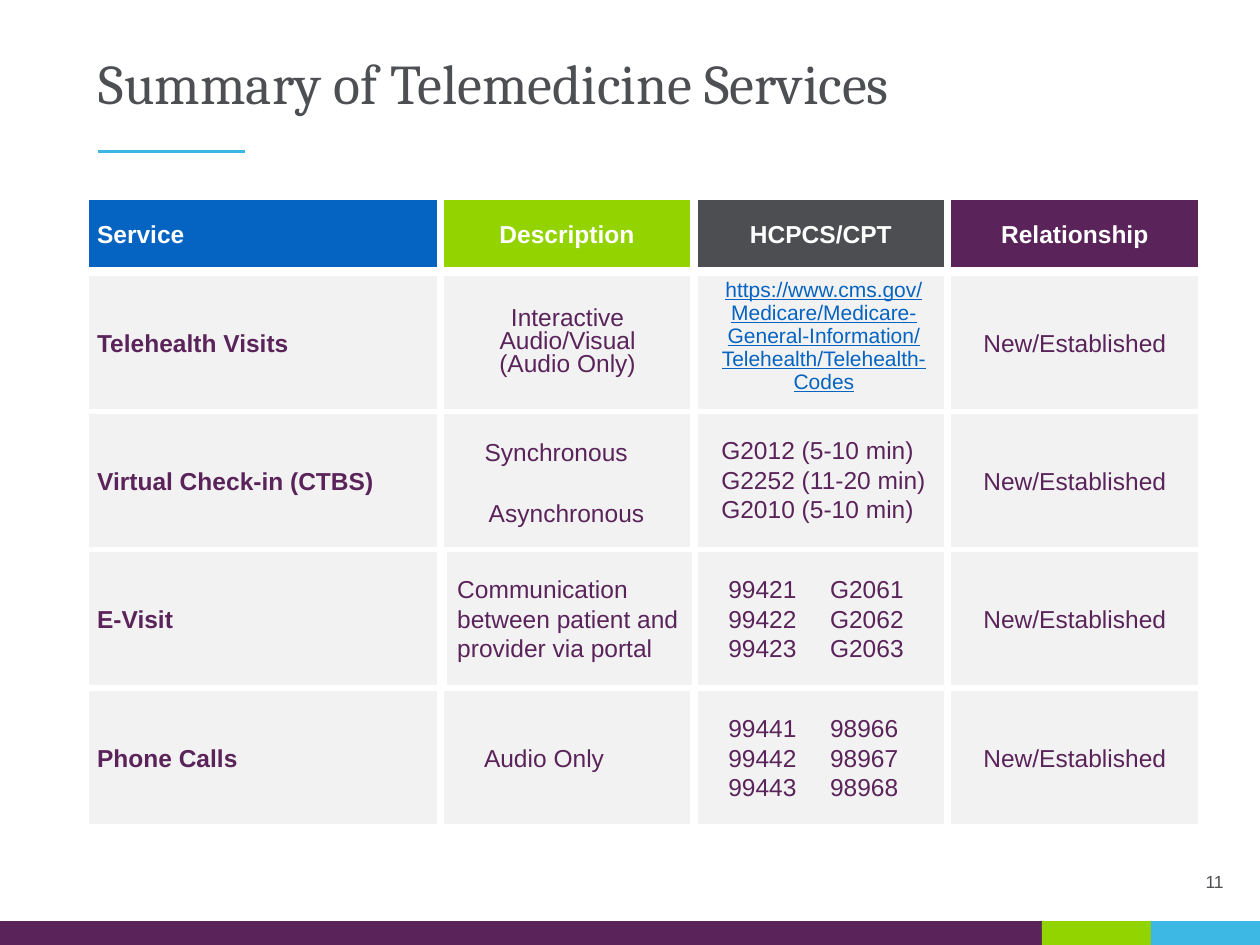
"""Build the slide that summarises telemedicine services."""
from dataclasses import dataclass

from lxml import etree
from pptx import Presentation
from pptx.dml.color import RGBColor
from pptx.enum.shapes import MSO_CONNECTOR, MSO_SHAPE
from pptx.enum.text import MSO_ANCHOR, PP_ALIGN
from pptx.oxml.ns import qn
from pptx.util import Pt

LEFT, CENTER, RIGHT = PP_ALIGN.LEFT, PP_ALIGN.CENTER, PP_ALIGN.RIGHT
TOP, MIDDLE, BOTTOM = MSO_ANCHOR.TOP, MSO_ANCHOR.MIDDLE, MSO_ANCHOR.BOTTOM
RECT, STRAIGHT = MSO_SHAPE.RECTANGLE, MSO_CONNECTOR.STRAIGHT

WHITE = RGBColor(0xFF, 0xFF, 0xFF)
GRAY = RGBColor(0x4D, 0x4F, 0x53)
HEAD_GRAY = RGBColor(0x4D, 0x4E, 0x52)
PALE = RGBColor(0xF2, 0xF2, 0xF2)
PURPLE = RGBColor(0x5A, 0x23, 0x5A)
BAR_PURPLE = RGBColor(0x5A, 0x24, 0x5A)
GREEN = RGBColor(0x92, 0xD3, 0x00)
BAR_GREEN = RGBColor(0x92, 0xD4, 0x00)
BLUE = RGBColor(0x05, 0x63, 0xC1)
SKY = RGBColor(0x3C, 0xB7, 0xE3)
BAR_SKY = RGBColor(0x3D, 0xB7, 0xE4)

COLUMNS = [(49.5, 201.6)] + [(252 + 145.1 * i, 144) for i in range(3)]
HEAD_TOP, HEAD_HEIGHT, HEAD_TEXT_WIDTH = 112.5, 41.8, 108
ROW_TOP, ROW_PITCH, ROW_HEIGHT = 156.2, 79, 79.2
E_VISIT_SHIFT = 2.2
LABEL_LEFT = 48.4
CODE_LEFT, CODE_WIDTH = 405.1, 133.9
LINE_HEIGHT, BLOCK_HEIGHT = 24.5, 58.3
BAR_TOP, BAR_HEIGHT = 526.3, 13.7

HEADERS = [("Service", BLUE), ("Description", GREEN),
           ("HCPCS/CPT", HEAD_GRAY), ("Relationship", PURPLE)]
SERVICES = ["Telehealth Visits", "Virtual Check-in (CTBS)", "E-Visit", "Phone Calls"]
BARS = [(0, 595.4, BAR_PURPLE), (595.4, 62.3, BAR_GREEN), (657.7, 62.3, BAR_SKY)]


@dataclass
class Style:
    """Look of the text in a box."""
    size: float = 14
    color: RGBColor = PURPLE
    font: str = "Arial"
    bold: bool = False
    underline: bool = False
    align: PP_ALIGN = LEFT
    anchor: MSO_ANCHOR = MIDDLE
    spacing: float | Pt | None = None
    inset_x: float = 7.2
    inset_y: float = 3.6
    tab: float | None = None


@dataclass
class Entry:
    """Text placed around the middle of a table row."""
    row: int
    left: float
    width: float
    height: float
    lines: list[str]
    style: Style
    shift: float = 0


PLAIN = Style()
CENTERED = Style(align=CENTER)
LABEL = Style(bold=True)
TIGHT = Style(align=CENTER, spacing=Pt(13.1), inset_x=2.9, inset_y=1.4)
URL = Style(size=12, color=BLUE, underline=True, align=CENTER,
            spacing=Pt(13.1), inset_x=2.9, inset_y=1.4)
CODES = Style(inset_x=11.1, tab=58.1)

ENTRIES = [
    Entry(0, 273.6, 101.5, 41.8, ["Interactive Audio/Visual (Audio Only)"], TIGHT),
    Entry(0, 400.3, 141.1, 68.4,
          ["https://www.cms.gov/Medicare/Medicare-General-Information/Telehealth/Telehealth-Codes"],
          URL, -3.7),
    Entry(1, 267.1, 101.5, 15.8, ["Synchronous"], TIGHT, -14.9),
    Entry(1, 272.2, 108, LINE_HEIGHT, ["Asynchronous"], PLAIN, 18.2),
    Entry(1, CODE_LEFT, CODE_WIDTH, BLOCK_HEIGHT,
          ["G2012 (5-10 min)", "G2252 (11-20 min)", "G2010 (5-10 min)"], PLAIN, -0.9),
    Entry(2, 254.2, 144, BLOCK_HEIGHT,
          ["Communication between patient and provider via portal"], PLAIN, -0.4),
    Entry(2, CODE_LEFT, CODE_WIDTH, BLOCK_HEIGHT,
          [f"9942{i}\tG206{i}" for i in (1, 2, 3)], CODES, -0.4),
    Entry(3, 269.5, 108.7, LINE_HEIGHT, ["Audio Only"], PLAIN),
    Entry(3, CODE_LEFT, CODE_WIDTH, BLOCK_HEIGHT,
          [f"9944{i}\t9896{i + 5}" for i in (1, 2, 3)], CODES),
]


def add_rect(s, left: float, top: float, width: float, height: float,
             fill: RGBColor, outlined: bool = False) -> None:
    """Draw a filled rectangle, with a white outline if wanted."""
    sp = s.shapes.add_shape(RECT, Pt(left), Pt(top), Pt(width), Pt(height))
    sp.shadow.inherit = False
    sp.fill.solid()
    sp.fill.fore_color.rgb = fill
    if outlined:
        sp.line.color.rgb = WHITE
        sp.line.width = Pt(3)
    else:
        sp.line.fill.background()


def add_text(s, left: float, top: float, width: float, height: float,
             lines: list[str], style: Style) -> None:
    """Add a text box with one paragraph for each line."""
    sp = s.shapes.add_textbox(Pt(left), Pt(top), Pt(width), Pt(height))
    tf = sp.text_frame
    tf.word_wrap = True
    tf.vertical_anchor = style.anchor
    tf.margin_left = tf.margin_right = Pt(style.inset_x)
    tf.margin_top = tf.margin_bottom = Pt(style.inset_y)
    for i, line in enumerate(lines):
        p = tf.add_paragraph() if i else tf.paragraphs[0]
        p.alignment = style.align
        if style.spacing is not None:
            p.line_spacing = style.spacing
        if style.tab is not None:
            tabs = etree.SubElement(p._p.get_or_add_pPr(), qn("a:tabLst"))
            etree.SubElement(tabs, qn("a:tab"), pos=str(Pt(style.tab)), algn="l")
        r = p.add_run()
        r.text = line
        r.font.name = style.font
        r.font.size = Pt(style.size)
        r.font.bold = style.bold
        r.font.underline = style.underline
        r.font.color.rgb = style.color


def add_entry(s, entry: Entry) -> None:
    """Place an entry around the middle of its row."""
    middle = ROW_TOP + ROW_PITCH * entry.row + ROW_HEIGHT / 2 + entry.shift
    add_text(s, entry.left, middle - entry.height / 2, entry.width,
             entry.height, entry.lines, entry.style)


def add_frame(s) -> None:
    """Draw the title, its rule, the slide number and the bottom bars."""
    rule = s.shapes.add_connector(STRAIGHT, Pt(56), Pt(86.4), Pt(140), Pt(86.4))
    rule.line.color.rgb = SKY
    rule.line.width = Pt(1.5)
    etree.SubElement(rule._element.spPr, qn("a:effectLst"))
    add_text(s, 85.7, 493.9, 620.6, 19.4, ["11"],
             Style(size=10, color=GRAY, align=RIGHT, anchor=BOTTOM, spacing=0.9))
    for left, width, color in BARS:
        add_rect(s, left, BAR_TOP, width, BAR_HEIGHT, color)
    add_text(s, 49.4, 28.5, 620.6, 44.6, ["Summary of Telemedicine Services"],
             Style(size=32, color=GRAY, font="Cambria", anchor=TOP, spacing=0.9))


def add_grid(s) -> None:
    """Draw the header cells and the body cells."""
    for (left, width), (_, color) in zip(COLUMNS, HEADERS):
        add_rect(s, left, HEAD_TOP, width, HEAD_HEIGHT, color, True)
    for row in range(len(SERVICES)):
        for col, (left, width) in enumerate(COLUMNS):
            shift = E_VISIT_SHIFT if (row, col) == (2, 1) else 0
            add_rect(s, left + shift, ROW_TOP + ROW_PITCH * row, width,
                     ROW_HEIGHT, PALE, True)


def add_contents(s) -> None:
    """Write the headers, the service rows and their entries."""
    head_top = HEAD_TOP + (HEAD_HEIGHT - LINE_HEIGHT) / 2 + 0.4
    for col, ((left, width), (name, _)) in enumerate(zip(COLUMNS, HEADERS)):
        style = Style(color=WHITE, bold=True, align=CENTER if col else LEFT)
        text_left = left + (width - HEAD_TEXT_WIDTH) / 2 if col else LABEL_LEFT
        add_text(s, text_left, head_top, HEAD_TEXT_WIDTH, LINE_HEIGHT, [name], style)
    for row, service in enumerate(SERVICES):
        add_entry(s, Entry(row, LABEL_LEFT, 203, LINE_HEIGHT, [service], LABEL))
        add_entry(s, Entry(row, 550.1, 128.2, LINE_HEIGHT, ["New/Established"], CENTERED))
    for entry in ENTRIES:
        add_entry(s, entry)


def main() -> None:
    """Build and save the presentation."""
    prs = Presentation()
    prs.slide_width, prs.slide_height = Pt(720), Pt(540)
    s = prs.slides.add_slide(prs.slide_layouts[6])
    add_frame(s)
    add_grid(s)
    add_contents(s)
    prs.save("out.pptx")


if __name__ == "__main__":
    main()
